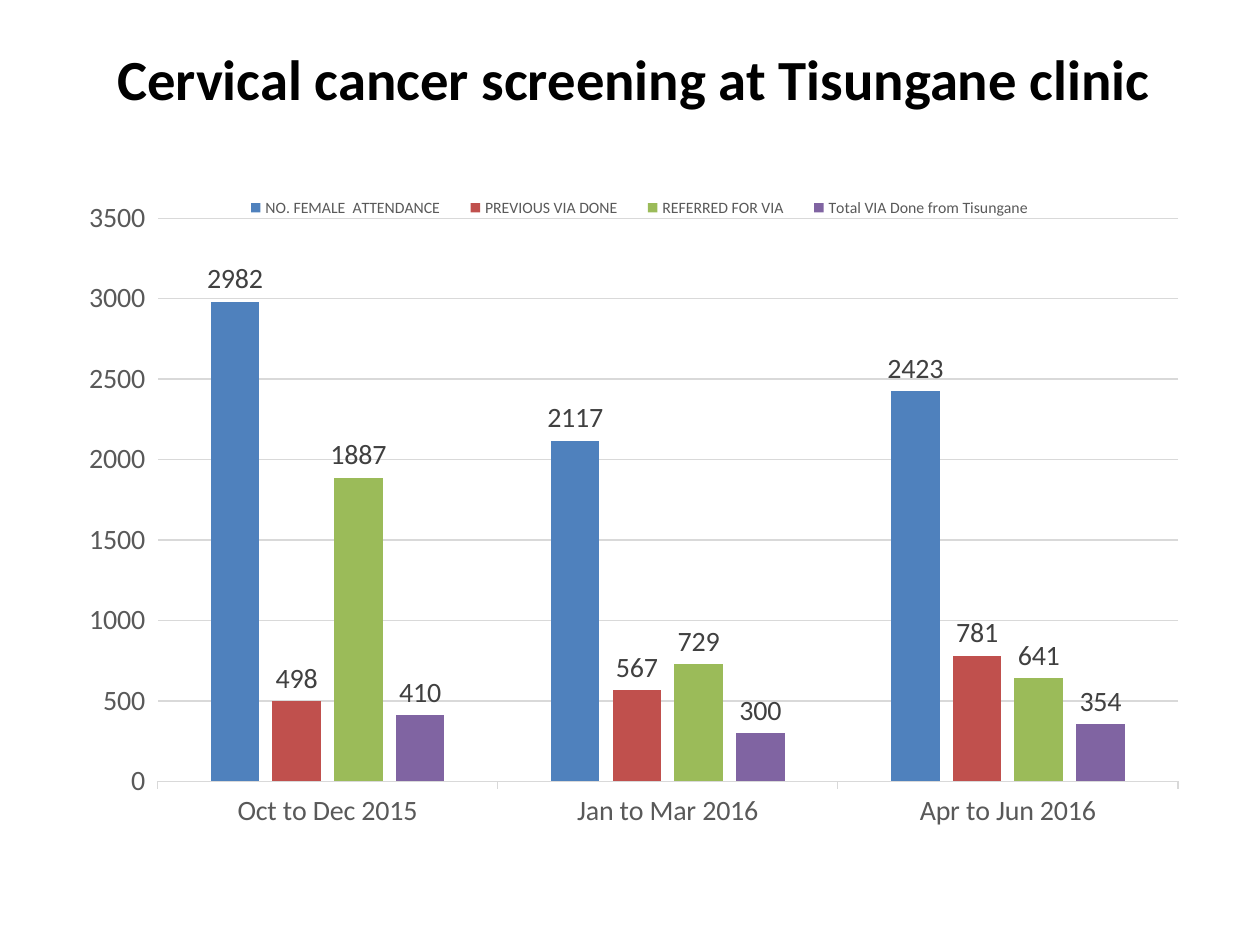
from dataclasses import dataclass

from lxml import etree
from pptx import Presentation
from pptx.chart.data import CategoryChartData
from pptx.dml.color import RGBColor
from pptx.enum import chart as ch, text
from pptx.oxml.ns import qn
from pptx.util import Inches, Pt


@dataclass(frozen=True)
class Theme:
    font: str = "Calibri"
    title_color: str = "000000"
    axis_color: str = "595959"
    label_color: str = "404040"
    grid_color: str = "D9D9D9"
    series_colors: tuple = ("4F81BD", "C0504D", "9BBB59", "8064A2")
    title_size: float = 32.4
    chart_size: float = 10
    axis_size: float = 16
    legend_size: float = 9
    line_width: float = 0.75


QUARTERS = ("Oct to Dec 2015", "Jan to Mar 2016", "Apr to Jun 2016")
SCREENING = {
    "NO. FEMALE  ATTENDANCE": (2982, 2117, 2423),
    "PREVIOUS VIA DONE": (498, 567, 781),
    "REFERRED FOR VIA": (1887, 729, 641),
    "Total VIA Done from Tisungane": (410, 300, 354),
}


class SlideBuilder:
    def __init__(self, deck, theme):
        self.theme = theme
        self.slide = deck.slides.add_slide(deck.slide_layouts[5])

    def style_font(self, font, size, color, bold=False):
        font.name = self.theme.font
        font.size = Pt(size)
        font.bold = bold
        font.color.rgb = RGBColor.from_string(color)

    def style_line(self, line):
        line.color.rgb = RGBColor.from_string(self.theme.grid_color)
        line.width = Pt(self.theme.line_width)

    def make_layout(self, x, y, w, h, inner=False):
        """Manual chart layout, in fractions of the chart frame."""
        layout = etree.Element(qn("c:layout"))
        manual = etree.SubElement(layout, qn("c:manualLayout"))
        values = {"layoutTarget": "inner"} if inner else {}
        values |= {"xMode": "edge", "yMode": "edge", "x": x, "y": y, "w": w, "h": h}
        for name, value in values.items():
            etree.SubElement(manual, qn(f"c:{name}")).set("val", str(value))
        return layout

    def title(self, wording, left, top, width, height):
        box = self.slide.shapes.title
        box.left, box.top = Inches(left), Inches(top)
        box.width, box.height = Inches(width), Inches(height)
        frame = box.text_frame
        frame.text = wording
        frame.word_wrap = True
        frame.auto_size = text.MSO_AUTO_SIZE.NONE
        frame.vertical_anchor = text.MSO_ANCHOR.TOP
        para = frame.paragraphs[0]
        para.alignment = text.PP_ALIGN.CENTER
        for span in para.runs:
            self.style_font(span.font, self.theme.title_size, self.theme.title_color, True)

    def column_chart(self, categories, series, left, top, width, height):
        theme = self.theme
        data = CategoryChartData(number_format="General")
        data.categories = categories
        for name, values in series.items():
            data.add_series(name, values)
        chart = self.slide.shapes.add_chart(
            ch.XL_CHART_TYPE.COLUMN_CLUSTERED, Inches(left), Inches(top),
            Inches(width), Inches(height), data).chart
        chart.has_title = False
        self.style_font(chart.font, theme.chart_size, theme.title_color)

        # Columns and their value labels
        plot = chart.plots[0]
        plot.gap_width, plot.overlap = 219, -27
        plot.vary_by_categories = False
        for column, color in zip(plot.series, theme.series_colors):
            column.format.fill.solid()
            column.format.fill.fore_color.rgb = RGBColor.from_string(color)
            labels = column.data_labels
            labels.show_value = True
            labels.position = ch.XL_LABEL_POSITION.OUTSIDE_END
            self.style_font(labels.font, theme.axis_size, theme.label_color)

        # Axes and gridlines
        for axis in (chart.category_axis, chart.value_axis):
            axis.major_tick_mark = ch.XL_TICK_MARK.OUTSIDE
            axis.minor_tick_mark = ch.XL_TICK_MARK.NONE
            self.style_font(axis.tick_labels.font, theme.axis_size, theme.axis_color)
        self.style_line(chart.category_axis.format.line)
        value_axis = chart.value_axis
        value_axis.minimum_scale, value_axis.maximum_scale = 0, 3500
        value_axis.major_unit = 500
        value_axis.format.line.fill.background()
        value_axis.has_major_gridlines = True
        self.style_line(value_axis.major_gridlines.format.line)

        # Legend just above the top gridline
        chart.has_legend = True
        legend = chart.legend
        legend.position = ch.XL_LEGEND_POSITION.TOP
        legend.include_in_layout = False
        self.style_font(legend.font, theme.legend_size, theme.axis_color)
        legend_xml = chart._chartSpace.find(".//" + qn("c:legend"))
        for layout in legend_xml.findall(qn("c:layout")):
            legend_xml.remove(layout)
        legend_xml.insert(1, self.make_layout(0.14, 0.06, 0.73, 0.05))

        # Plot area
        plot_xml = chart._chartSpace.find(".//" + qn("c:plotArea"))
        for layout in plot_xml.findall(qn("c:layout")):
            plot_xml.remove(layout)
        plot_xml.insert(0, self.make_layout(0.08, 0.1, 0.9, 0.81, inner=True))


def main():
    deck = Presentation()
    deck.slide_width, deck.slide_height = Inches(10), Inches(7.5)
    builder = SlideBuilder(deck, Theme())
    builder.title("Cervical cancer screening at Tisungane clinic", 0.53, 0.3, 9, 1.25)
    builder.column_chart(QUARTERS, SCREENING, 0.53, 1.18, 9, 5.52)
    deck.save("out.pptx")


if __name__ == "__main__":
    main()
